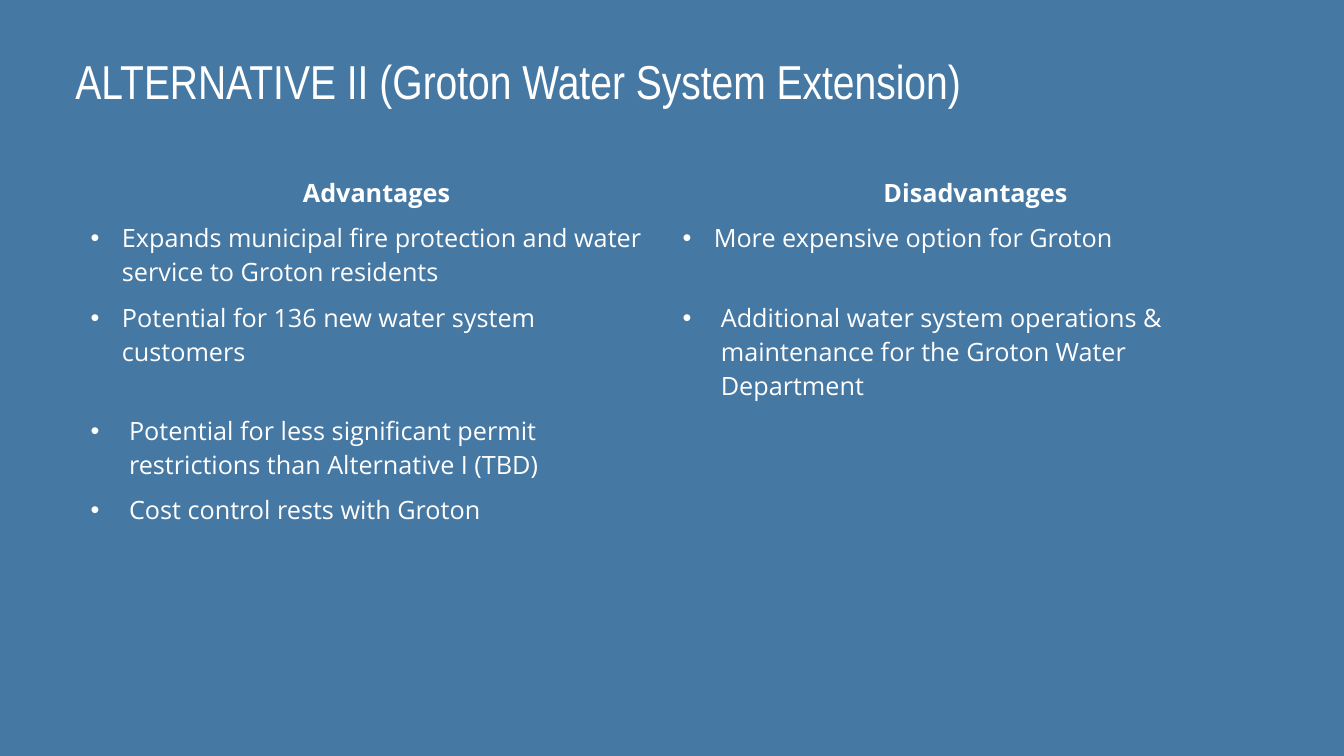
from pptx import Presentation
from pptx.dml.color import RGBColor
from pptx.enum.text import MSO_ANCHOR, PP_ALIGN
from pptx.oxml.ns import qn
from pptx.util import Inches, Pt
from lxml.etree import SubElement

BLUE = RGBColor(0x46, 0x78, 0xA4)
WHITE = RGBColor(0xFF, 0xFF, 0xFF)
PLAIN_STYLE = "{2D5ABB26-0587-4C30-8999-92F81FD0307C}"

COLUMN_WIDTHS = (5.87, 6.01)
ROW_HEIGHTS = (0.45, 0.79, 1.12, 0.79, 0.79, 0.79)
HEADINGS = ("Advantages", "Disadvantages")
# Each point is its text and its hanging indent in inches.
ADVANTAGES = (
    ("Expands municipal fire protection and water service to Groton residents", 0.31),
    ("Potential for 136 new water system customers", 0.31),
    ("Potential for less significant permit restrictions than Alternative I (TBD)", 0.38),
    ("Cost control rests with Groton", 0.38),
)
DISADVANTAGES = (
    ("More expensive option for Groton", 0.31),
    ("Additional water system operations & maintenance for the Groton Water Department", 0.38),
)


def write_text(frame, text, font="Open Sans", size=18, bold=False,
               align=PP_ALIGN.LEFT, line_spacing=None, hanging=None):
    """Fill the first paragraph; a hanging indent in inches makes it a bullet."""
    paragraph = frame.paragraphs[0]
    if hanging:
        properties = paragraph._p.get_or_add_pPr()
        properties.set("marL", str(Inches(hanging)))
        properties.set("indent", str(-Inches(hanging)))
        SubElement(properties, qn("a:buFont")).set("typeface", "Arial")
        SubElement(properties, qn("a:buChar")).set("char", "•")
    paragraph.alignment = align
    if line_spacing:
        paragraph.line_spacing = line_spacing
    run = paragraph.add_run()
    run.text = text
    run.font.name = font
    run.font.size = Pt(size)
    run.font.bold = bold
    run.font.color.rgb = WHITE


def add_title(slide, text):
    title = slide.shapes.add_textbox(Inches(0.65), Inches(0.04), Inches(12.03), Inches(1.1))
    title.text_frame.word_wrap = True
    title.text_frame.vertical_anchor = MSO_ANCHOR.BOTTOM
    write_text(title.text_frame, text, font="Arial Narrow", size=34, line_spacing=0.9)


def add_comparison(slide):
    table = slide.shapes.add_table(
        len(ROW_HEIGHTS), len(COLUMN_WIDTHS), Inches(0.8), Inches(1.69),
        Inches(sum(COLUMN_WIDTHS)), Inches(sum(ROW_HEIGHTS))).table
    table._tbl.tblPr.find(qn("a:tableStyleId")).text = PLAIN_STYLE
    table.first_row = table.horz_banding = False
    for column, width in zip(table.columns, COLUMN_WIDTHS):
        column.width = Inches(width)
    for row, height in zip(table.rows, ROW_HEIGHTS):
        row.height = Inches(height)
    for cell in table.iter_cells():
        cell.fill.background()
    for index, points in enumerate((ADVANTAGES, DISADVANTAGES)):
        write_text(table.cell(0, index).text_frame, HEADINGS[index],
                   bold=True, align=PP_ALIGN.CENTER)
        for row, (text, hanging) in enumerate(points, start=1):
            write_text(table.cell(row, index).text_frame, text, hanging=hanging)


def main():
    deck = Presentation()
    deck.slide_width, deck.slide_height = Inches(13.33), Inches(7.5)
    slide = deck.slides.add_slide(deck.slide_layouts[6])
    slide.background.fill.solid()
    slide.background.fill.fore_color.rgb = BLUE
    add_comparison(slide)
    add_title(slide, "ALTERNATIVE II (Groton Water System Extension)")
    deck.save("out.pptx")


if __name__ == "__main__":
    main()
